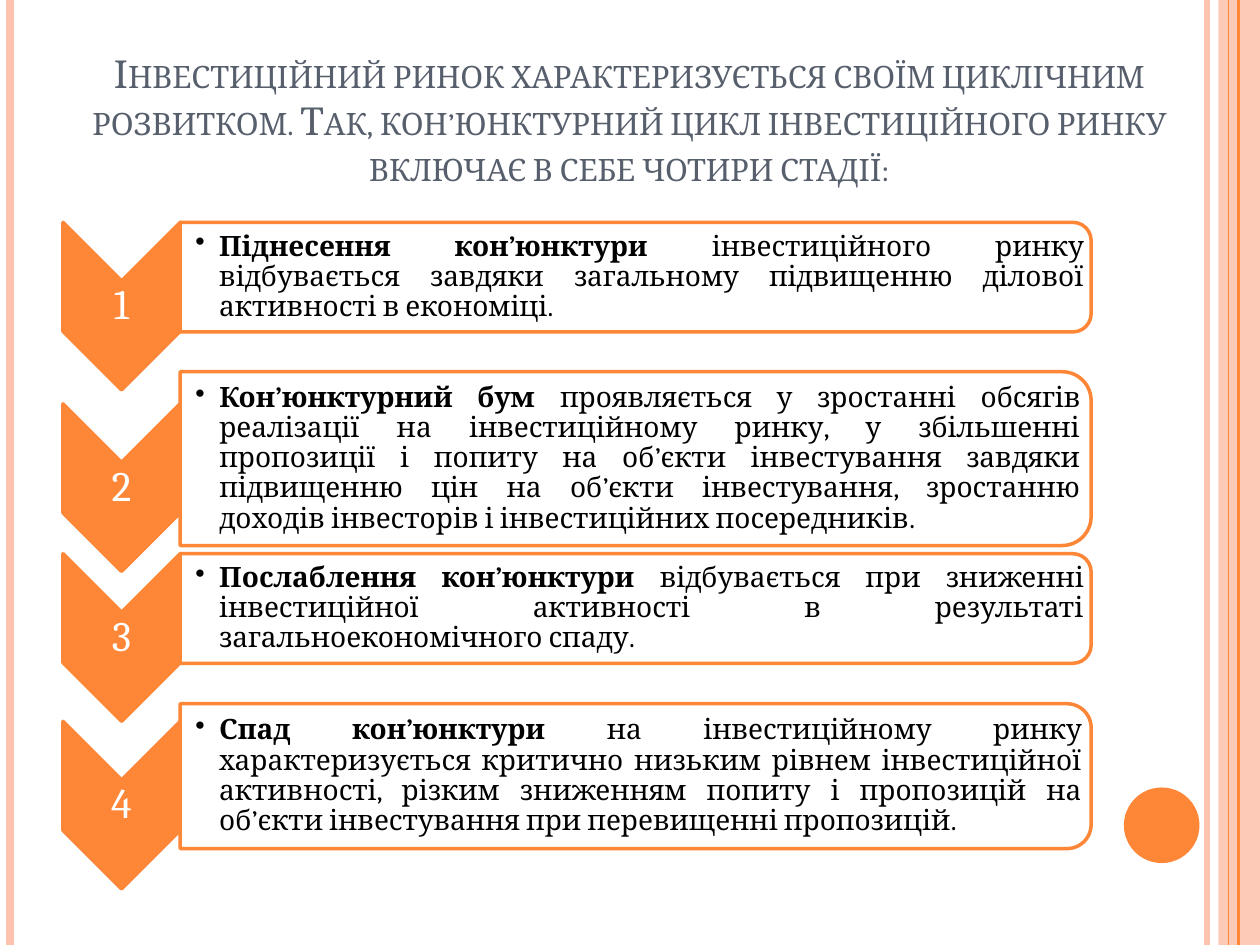
from lxml import etree
from pptx import Presentation
from pptx.dml.color import RGBColor
from pptx.enum.shapes import MSO_CONNECTOR, MSO_SHAPE
from pptx.enum.text import MSO_ANCHOR, MSO_AUTO_SIZE, PP_ALIGN
from pptx.oxml.ns import qn
from pptx.util import Inches, Pt

CENTER, JUSTIFY = PP_ALIGN.CENTER, PP_ALIGN.JUSTIFY
MIDDLE, BOTTOM = MSO_ANCHOR.MIDDLE, MSO_ANCHOR.BOTTOM
ORANGE = RGBColor(0xFE, 0x86, 0x37)
PEACH = RGBColor(0xFE, 0xC3, 0xAE)
SLATE = RGBColor(0x57, 0x5F, 0x6D)
WHITE = RGBColor(0xFF, 0xFF, 0xFF)
BLACK = RGBColor(0, 0, 0)
FONT = "Cambria"

TITLE = ("Інвестиційний ринок характеризується своїм циклічним розвитком. "
         "Так, кон’юнктурний цикл інвестиційного ринку включає в себе чотири стадії:")
# Stage: panel middle, panel height, bold lead, explanation
STAGES = [
    (2.2, 0.87, "Піднесення кон’юнктури ",
     "інвестиційного ринку відбувається завдяки загальному підвищенню "
     "ділової активності в економіці."),
    (3.64, 1.38, "Кон’юнктурний бум ",
     "проявляється у зростанні обсягів реалізації на інвестиційному ринку, "
     "у збільшенні пропозиції і попиту на об’єкти інвестування завдяки "
     "підвищенню цін на об’єкти інвестування, зростанню доходів інвесторів "
     "і інвестиційних посередників."),
    (4.83, 0.87, "Послаблення кон’юнктури ",
     "відбувається при зниженні інвестиційної активності в результаті "
     "загальноекономічного спаду."),
    (6.16, 1.15, "Спад кон’юнктури ",
     "на інвестиційному ринку характеризується критично низьким рівнем "
     "інвестиційної активності, різким зниженням попиту і пропозицій на "
     "об’єкти інвестування при перевищенні пропозицій."),
]
# Vertical rules: x, colour, width in points
RULES = [(9.58, PEACH, 3), (0.08, PEACH, 4.5), (9.83, ORANGE, 1.5), (9.75, ORANGE, 0.75)]

SLIDE_W, SLIDE_H = 10, 7.5
CHEVRON_X, CHEVRON_W, CHEVRON_H = 0.5, 0.93, 1.33
CHEVRON_DROP = 0.23           # chevron middle below panel middle
PANEL_X, PANEL_W = CHEVRON_X + CHEVRON_W, 7.23
CORNER = 0.05                 # text inset for the rounded corner, share of height

prs = Presentation()
prs.slide_width, prs.slide_height = Inches(SLIDE_W), Inches(SLIDE_H)
s = prs.slides.add_slide(prs.slide_layouts[5])


def add_shape(kind, x, y, w, h, fill, line=None, opacity=100):
    sp = s.shapes.add_shape(kind, Inches(x), Inches(y), Inches(w), Inches(h))
    sp.shadow.inherit = False
    sp.fill.solid()
    sp.fill.fore_color.rgb = fill
    if opacity < 100:
        color = sp.fill._xPr.find(".//" + qn("a:srgbClr"))
        etree.SubElement(color, qn("a:alpha"), val=str(opacity * 1000))
    if line is None:
        sp.line.fill.background()
    else:
        sp.line.color.rgb = line
        sp.line.width = Pt(2)
    return sp


def add_turned(kind, x, middle, w, h, fill, opacity=100):
    """Shape that covers w by h once it is turned a quarter clockwise."""
    sp = add_shape(kind, x + (w - h) / 2, middle - w / 2, h, w, fill, ORANGE, opacity)
    sp.rotation = 90
    return sp


def add_text(x, middle, w, h, runs, size, color, align, left, other):
    tb = s.shapes.add_textbox(Inches(x), Inches(middle - h / 2), Inches(w), Inches(h))
    tf = tb.text_frame
    tf.word_wrap = True
    tf.vertical_anchor = MIDDLE
    tf.margin_left = Inches(left)
    tf.margin_top = tf.margin_right = tf.margin_bottom = Inches(other)
    p = tf.paragraphs[0]
    p.alignment = align
    p.line_spacing = 0.9
    for text, bold in runs:
        r = p.add_run()
        r.text = text
        style(r, size, color, bold)
    return p


def style(r, size, color, bold=False):
    r.font.name, r.font.size, r.font.bold = FONT, Pt(size), bold
    r.font.color.rgb = color


def add_bullet(p, indent):
    pPr = p._p.get_or_add_pPr()
    pPr.set("marL", str(Inches(indent)))
    pPr.set("indent", str(-Inches(indent)))
    etree.SubElement(pPr, qn("a:buChar"), char="•")


# Side decoration
add_shape(MSO_SHAPE.RECTANGLE, 9.67, 0, 0.33, SLIDE_H, PEACH, opacity=87)
for x, color, width in RULES:
    c = s.shapes.add_connector(MSO_CONNECTOR.STRAIGHT, Inches(x), 0, Inches(x), Inches(SLIDE_H))
    c.line.color.rgb = color
    c.line.width = Pt(width)
    etree.SubElement(c._element.spPr, qn("a:effectLst"))
add_shape(MSO_SHAPE.OVAL, 8.92, 6.25, 0.6, 0.6, ORANGE)

# Title
title = s.shapes.title
title.left, title.top = Inches(0.5), Inches(0.13)
title.width, title.height = Inches(8.99), Inches(1.42)
tf = title.text_frame
tf.text = TITLE
tf.word_wrap = True
tf.auto_size = MSO_AUTO_SIZE.NONE
tf.vertical_anchor = BOTTOM
p = tf.paragraphs[0]
p.alignment = CENTER
r = p.runs[0]
style(r, 22, SLATE)
r.font._element.set("cap", "small")

# Stages: numbered chevron and text panel
for number, (middle, height, lead, text) in enumerate(STAGES, 1):
    low = middle + CHEVRON_DROP
    add_turned(MSO_SHAPE.CHEVRON, CHEVRON_X, low, CHEVRON_W, CHEVRON_H, ORANGE)
    add_text(CHEVRON_X, low, CHEVRON_W, 0.4, [(str(number), False)],
             24, WHITE, CENTER, 0.02, 0.02)
    add_turned(MSO_SHAPE.ROUND_2_SAME_RECTANGLE, PANEL_X, middle, PANEL_W, height, WHITE, 90)
    inset = CORNER * height
    p = add_text(PANEL_X, middle, PANEL_W - inset, height - 2 * inset,
                 [(lead, True), (text, False)], 16, BLACK, JUSTIFY, 0.12, 0.01)
    add_bullet(p, 0.19)

prs.save("out.pptx")
